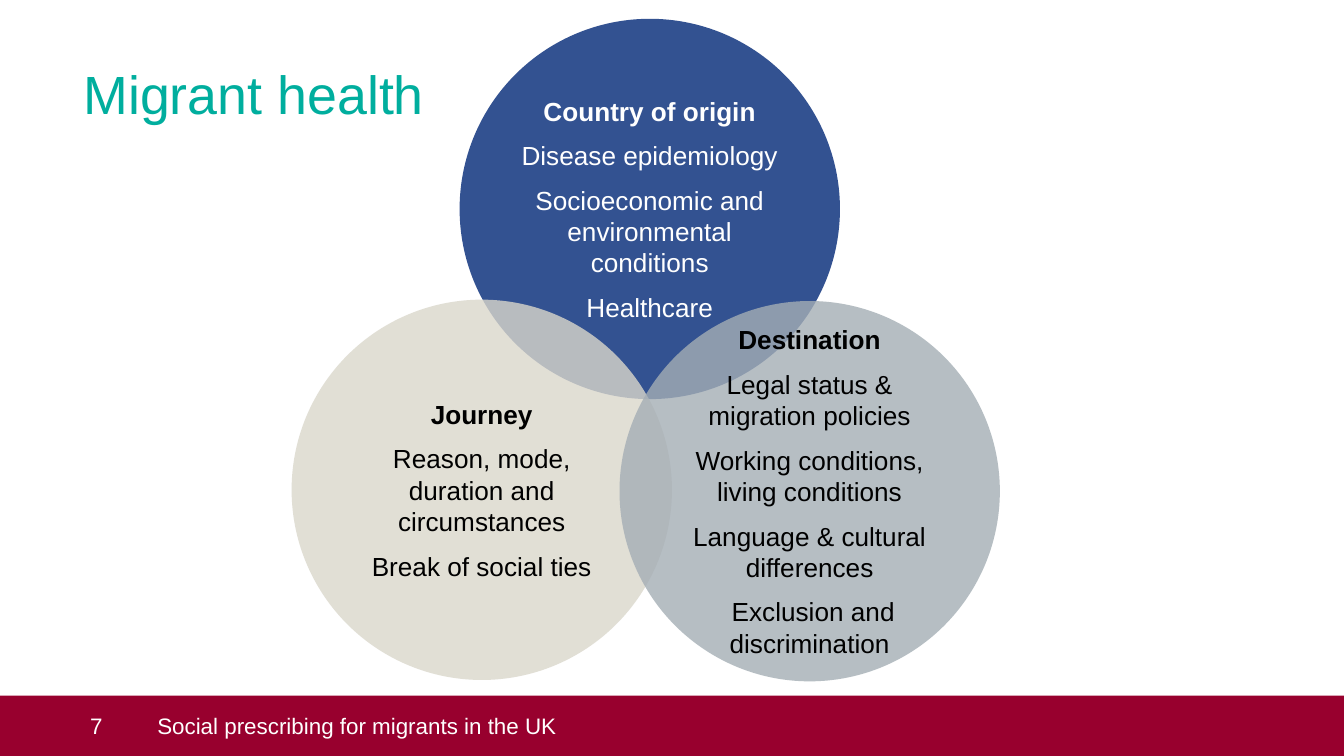
from lxml import etree
from pptx import Presentation
from pptx.dml.color import RGBColor
from pptx.enum.shapes import MSO_SHAPE as Shape
from pptx.enum.text import MSO_ANCHOR as Anchor, PP_ALIGN as Align
from pptx.oxml.ns import qn
from pptx.util import Inches, Pt

TEAL = RGBColor(0x00, 0xAE, 0x9E)
CRIMSON = RGBColor(0x98, 0x00, 0x2E)
NAVY = RGBColor(0x00, 0x27, 0x76)
SAND = RGBColor(0xDA, 0xD7, 0xCB)
GREY = RGBColor(0xA4, 0xAE, 0xB5)
WHITE = RGBColor(0xFF, 0xFF, 0xFF)
BLACK = RGBColor(0x00, 0x00, 0x00)

WIDTH = 10
HEIGHT = WIDTH * 9 / 16
FOOTER_HEIGHT = 0.45
FOOTER_TOP = HEIGHT - FOOTER_HEIGHT
DIAMETER = 2.83


class SlideBuilder:
    """Holds the text style and the slide being built."""
    font = "Arial"

    def __init__(self, slide):
        self.slide = slide

    def style(self, paragraph, size, color, bold=False, align=Align.LEFT):
        paragraph.alignment = align
        for run in paragraph.runs:
            run.font.name = self.font
            run.font.size = Pt(size)
            run.font.color.rgb = color
            run.font.bold = bold

    def frame(self, shape, insets, anchor=Anchor.MIDDLE):
        frame = shape.text_frame
        frame.word_wrap = True
        frame.vertical_anchor = anchor
        (frame.margin_left, frame.margin_top,
         frame.margin_right, frame.margin_bottom) = map(Inches, insets)
        return frame

    def line(self, shape, text, size, color, left_inset=0, anchor=Anchor.MIDDLE):
        frame = self.frame(shape, (left_inset, 0, 0, 0), anchor)
        frame.text = text
        self.style(frame.paragraphs[0], size, color)

    def title(self, text, left, top, width, height):
        title = self.slide.shapes.title
        title.left, title.top = Inches(left), Inches(top)
        title.width, title.height = Inches(width), Inches(height)
        self.line(title, text, 28.8, TEAL, anchor=Anchor.TOP)

    def shape(self, kind, left, top, width, height, fill):
        shape = self.slide.shapes.add_shape(
            kind, Inches(left), Inches(top), Inches(width), Inches(height))
        shape.shadow.inherit = False
        shape.fill.solid()
        shape.fill.fore_color.rgb = fill
        shape.line.fill.background()
        return shape

    def footer(self, number, text):
        bar = self.shape(Shape.RECTANGLE, 0, FOOTER_TOP, WIDTH, FOOTER_HEIGHT, CRIMSON)
        self.line(bar, number, 12, WHITE, left_inset=0.67)
        label = self.slide.shapes.add_textbox(
            Inches(0.98), Inches(FOOTER_TOP), Inches(8.82), Inches(FOOTER_HEIGHT))
        self.line(label, text, 12, WHITE, left_inset=0.19)

    def circle(self, left, top, fill, color, side_inset, lines):
        circle = self.shape(Shape.OVAL, left, top, DIAMETER, DIAMETER, fill)
        # 80 % opacity lets the overlaps show
        tint = circle.fill._xPr.find(".//" + qn("a:srgbClr"))
        etree.SubElement(tint, qn("a:alpha"), val="80000")
        frame = self.frame(circle, (side_inset, 0.05, side_inset, 0.05))
        frame.text = "\n".join(lines)
        for index, paragraph in enumerate(frame.paragraphs):
            paragraph.space_before = Pt(7)
            self.style(paragraph, 14, color, bold=index == 0, align=Align.CENTER)


prs = Presentation()
prs.slide_width, prs.slide_height = Inches(WIDTH), Inches(HEIGHT)
builder = SlideBuilder(prs.slides.add_slide(prs.slide_layouts[5]))

# Title and footer
builder.title("Migrant health", 0.62, 0.45, 8.78, 0.53)
builder.footer("7", "Social prescribing for migrants in the UK")

# Overlapping stages of migration
STAGES = [
    (3.42, 0.14, NAVY, WHITE, 0.04,
     ["Country of origin", "Disease epidemiology",
      "Socioeconomic and environmental conditions", "Healthcare"]),
    (2.17, 2.23, SAND, BLACK, 0.1,
     ["Journey", "Reason, mode, duration and circumstances",
      "Break of social ties"]),
    (4.61, 2.24, GREY, BLACK, 0.1,
     ["Destination", "Legal status & migration policies",
      "Working conditions, living conditions",
      "Language & cultural differences", " Exclusion and discrimination"]),
]
for stage in STAGES:
    builder.circle(*stage)

prs.save("out.pptx")
